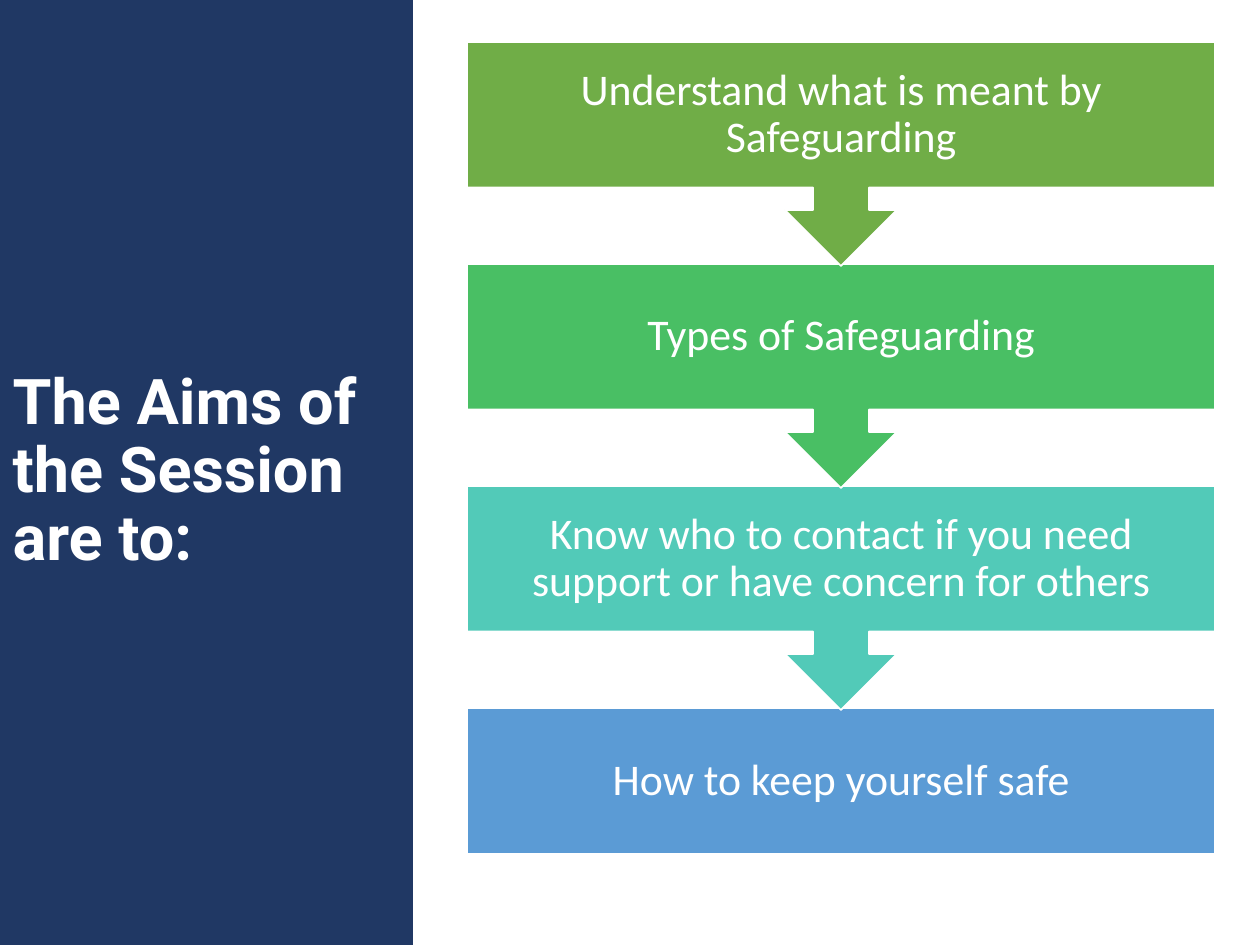
from pptx import Presentation
from pptx import util as u
from pptx.dml.color import RGBColor
from pptx.enum import shapes, text

PX = 914400 / 126
NAVY = RGBColor(0x20, 0x38, 0x64)
WHITE = RGBColor(0xFF, 0xFF, 0xFF)
GREEN = RGBColor(0x70, 0xAD, 0x47)
LIME = RGBColor(0x49, 0xBF, 0x64)
TEAL = RGBColor(0x52, 0xCA, 0xB8)
BLUE = RGBColor(0x5B, 0x9B, 0xD5)

AIMS = [
    ("Understand what is meant by Safeguarding", GREEN),
    ("Types of Safeguarding", LIME),
    ("Know who to contact if you need support or have concern for others", TEAL),
    ("How to keep yourself safe", BLUE),
]


def px(n):
    return u.Emu(round(n * PX))


def write(shape, words, size, font, bold=False, align=text.PP_ALIGN.LEFT, pad=None):
    frame = shape.text_frame
    frame.word_wrap = True
    frame.auto_size = text.MSO_AUTO_SIZE.NONE
    frame.vertical_anchor = text.MSO_ANCHOR.MIDDLE
    if pad is not None:
        frame.margin_left = frame.margin_right = px(pad)
        frame.margin_top = frame.margin_bottom = px(pad)
    para = frame.paragraphs[0]
    para.alignment = align
    para.line_spacing = 0.9
    run = para.add_run()
    run.text = words
    run.font.size = u.Pt(size)
    run.font.name = font
    run.font.bold = bold
    run.font.color.rgb = WHITE


def panel(slide, x, y, w, h):
    title = slide.shapes.title
    title.left, title.top, title.width, title.height = map(px, (x, y, w, h))
    title.fill.solid()
    title.fill.fore_color.rgb = NAVY
    write(title, "The Aims of the Session are to:", 36, "Roboto", bold=True)


def flow(slide, x, y, w, step, tall, box):
    group = slide.shapes.add_group_shape()
    kinds = shapes.MSO_SHAPE
    last = len(AIMS) - 1
    for i, (words, color) in reversed(list(enumerate(AIMS))):
        kind, high = (kinds.RECTANGLE, box) if i == last else (kinds.DOWN_ARROW_CALLOUT, tall)
        step_box = group.shapes.add_shape(kind, px(x), px(y + i * step), px(w), px(high))
        step_box.shadow.inherit = False
        step_box.fill.solid()
        step_box.fill.fore_color.rgb = color
        step_box.line.color.rgb = WHITE
        step_box.line.width = u.Pt(1)
        write(step_box, words, 25, "Calibri", align=text.PP_ALIGN.CENTER, pad=24)


def main():
    deck = Presentation()
    deck.slide_width, deck.slide_height = px(1260), px(945)
    slide = deck.slides.add_slide(deck.slide_layouts[5])
    panel(slide, 0, 0, 413, 945)
    flow(slide, 467, 42, 748, step=222, tall=224, box=146)
    deck.save("out.pptx")


if __name__ == "__main__":
    main()
